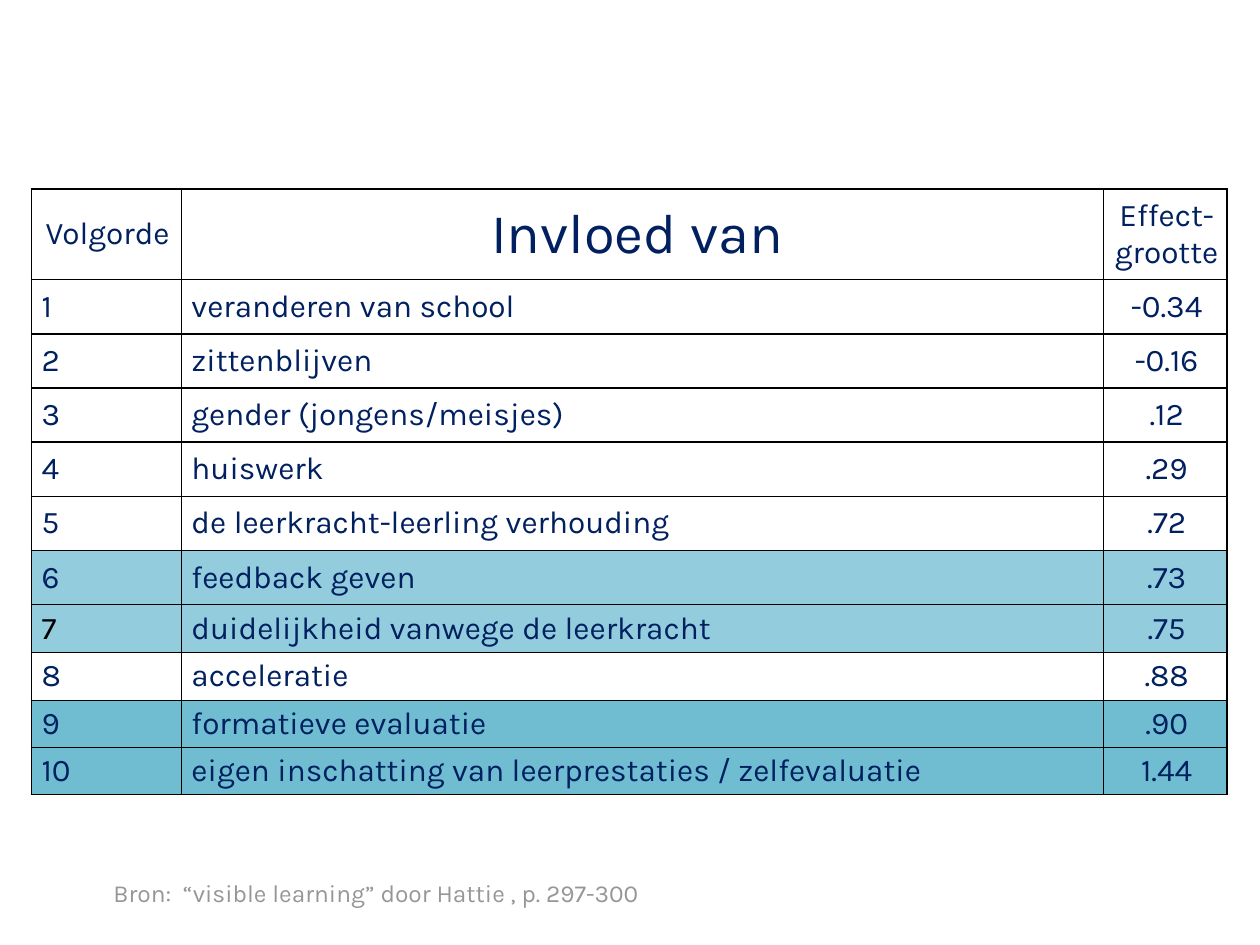
from lxml import etree
from pptx import Presentation
from pptx.dml.color import RGBColor
from pptx.enum.text import MSO_ANCHOR, PP_ALIGN
from pptx.oxml.ns import qn
from pptx.util import Inches, Pt

LEFT, CENTER = PP_ALIGN.LEFT, PP_ALIGN.CENTER
MIDDLE = MSO_ANCHOR.MIDDLE
COLORS = {
    "navy": "002060",
    "black": "000000",
    "gray": "969696",
    "white": "FFFFFF",
    "light": "93CDDD",
    "teal": "70BDD2",
}
FONT = "Karla"
COLUMN_WIDTHS = [1.19, 7.32, 0.98]
ROW_HEIGHTS = [0.72] + [0.43] * 6 + [0.38] * 2 + [0.37] * 2
HEADERS = ["Volgorde", "Invloed van ", "Effect-grootte"]
INFLUENCES = [
    ("veranderen van school", "-0.34", "white"),
    ("zittenblijven", "-0.16", "white"),
    ("gender (jongens/meisjes)", ".12", "white"),
    ("huiswerk", ".29", "white"),
    ("de leerkracht-leerling verhouding", ".72", "white"),
    ("feedback geven", ".73", "light"),
    ("duidelijkheid vanwege de leerkracht", ".75", "light"),
    ("acceleratie", ".88", "white"),
    ("formatieve evaluatie", ".90", "teal"),
    ("eigen inschatting van leerprestaties / zelfevaluatie", "1.44", "teal"),
]


def write_text(text_frame, text, size=18, color="navy", alignment=LEFT):
    text_frame.word_wrap = True
    paragraph = text_frame.paragraphs[0]
    paragraph.alignment = alignment
    run = paragraph.add_run()
    run.text = text
    run.font.name = FONT
    run.font.size = Pt(size)
    run.font.color.rgb = RGBColor.from_string(COLORS[color])


def format_cell(cell, fill):
    cell.vertical_anchor = MIDDLE
    cell.margin_left = Inches(0.08)
    cell.margin_right = Inches(0.06)
    cell.margin_top = cell.margin_bottom = Inches(0.04)
    properties = cell._tc.get_or_add_tcPr()
    for side in ("a:lnL", "a:lnR", "a:lnT", "a:lnB"):
        line = etree.SubElement(properties, qn(side), w=str(Pt(1)))
        solid = etree.SubElement(line, qn("a:solidFill"))
        etree.SubElement(solid, qn("a:srgbClr"), val=COLORS["black"])
    cell.fill.solid()
    cell.fill.fore_color.rgb = RGBColor.from_string(COLORS[fill])


presentation = Presentation()
presentation.slide_width = Inches(10)
presentation.slide_height = Inches(7.5)
slide = presentation.slides.add_slide(presentation.slide_layouts[6])

table = slide.shapes.add_table(
    len(ROW_HEIGHTS), len(COLUMN_WIDTHS), Inches(0.25), Inches(1.5),
    Inches(sum(COLUMN_WIDTHS)), Inches(sum(ROW_HEIGHTS)),
).table
for column, width in zip(table.columns, COLUMN_WIDTHS):
    column.width = Inches(width)
for row, height in zip(table.rows, ROW_HEIGHTS):
    row.height = Inches(height)

for index, header in enumerate(HEADERS):
    cell = table.cell(0, index)
    format_cell(cell, "white")
    write_text(cell.text_frame, header, size=32 if index == 1 else 18, alignment=CENTER)

for rank, (influence, effect, fill) in enumerate(INFLUENCES, start=1):
    for index, text in enumerate([str(rank), influence, effect]):
        cell = table.cell(rank, index)
        format_cell(cell, fill)
        write_text(
            cell.text_frame, text,
            color="black" if text == "7" else "navy",
            alignment=CENTER if index == 2 else LEFT,
        )

source = slide.shapes.add_textbox(Inches(0.83), Inches(6.93), Inches(5.13), Inches(0.5))
source.text_frame.margin_left = source.text_frame.margin_right = Inches(0.07)
source.text_frame.margin_top = source.text_frame.margin_bottom = Inches(0.04)
write_text(
    source.text_frame, "Bron:  “visible learning” door Hattie , p. 297-300",
    size=14, color="gray",
)

presentation.save("out.pptx")
